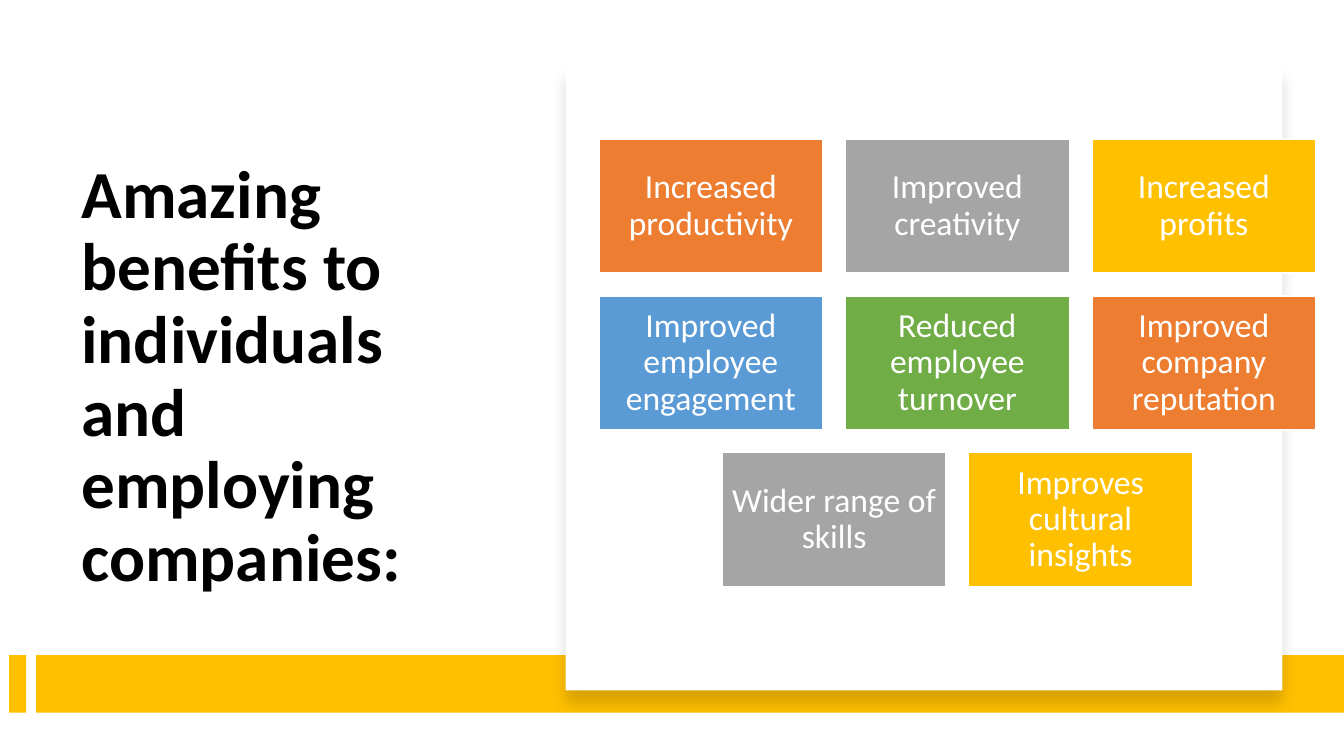
import pptx
import pptx.util
import pptx.dml.color
import pptx.enum.shapes
import pptx.enum.text
import pptx.oxml

COLORS = {
    "black": "000000",
    "white": "FFFFFF",
    "gold": "FFC000",
    "orange": "ED7D31",
    "gray": "A5A5A5",
    "blue": "5B9BD5",
    "green": "70AD47",
}
FONT = "Calibri"
COLUMNS = 3
GRID_LEFT, GRID_TOP = 5.94, 1.38
CARD_W, CARD_H = 2.22, 1.33
COLUMN_STEP, ROW_STEP = 2.445, 1.555
BENEFITS = [
    [("Increased productivity", "orange"), ("Improved creativity", "gray"),
     ("Increased profits", "gold")],
    [("Improved employee engagement", "blue"), ("Reduced employee turnover", "green"),
     ("Improved company reputation", "orange")],
    [("Wider range of skills", "gray"), ("Improves cultural insights", "gold")],
]
SHADOW = (
    '<a:effectLst xmlns:a="http://schemas.openxmlformats.org/drawingml/2006/main">'
    '<a:outerShdw blurRad="{blur}" dist="{dist}" dir="5400000" algn="t" rotWithShape="0">'
    '<a:srgbClr val="{color}"><a:alpha val="15000"/></a:srgbClr>'
    '</a:outerShdw></a:effectLst>'
)


def rgb(name):
    return pptx.dml.color.RGBColor.from_string(COLORS[name])


def inches(*values):
    return [pptx.util.Inches(v) for v in values]


def write_text(sp, text, size, color, bold=False, align="LEFT", inset=(0.1, 0.05)):
    tf = sp.text_frame
    tf.word_wrap = True
    tf.vertical_anchor = pptx.enum.text.MSO_ANCHOR.MIDDLE
    tf.margin_left = tf.margin_right = pptx.util.Inches(inset[0])
    tf.margin_top = tf.margin_bottom = pptx.util.Inches(inset[1])
    p = tf.paragraphs[0]
    p.alignment = getattr(pptx.enum.text.PP_ALIGN, align)
    p.line_spacing = 0.9
    r = p.add_run()
    r.text = text
    r.font.name = FONT
    r.font.size = pptx.util.Pt(size)
    r.font.bold = bold
    r.font.color.rgb = rgb(color)


def add_rect(s, box, fill, line=None):
    sp = s.shapes.add_shape(pptx.enum.shapes.MSO_SHAPE.RECTANGLE, *inches(*box))
    sp.shadow.inherit = False
    sp.fill.solid()
    sp.fill.fore_color.rgb = rgb(fill)
    if line:
        sp.line.color.rgb = rgb(line)
        sp.line.width = pptx.util.Pt(1)
    else:
        sp.line.fill.background()
    return sp


def add_panel(s, box):
    sp = add_rect(s, box, "white")
    sp.shadow.inherit = True
    sp._element.spPr.append(pptx.oxml.parse_xml(SHADOW.format(
        blur=pptx.util.Pt(11), dist=pptx.util.Pt(10), color=COLORS["black"])))


def add_cards(s):
    for row, cards in enumerate(BENEFITS):
        indent = (COLUMNS - len(cards)) / 2
        for column, (text, fill) in enumerate(cards):
            left = GRID_LEFT + (column + indent) * COLUMN_STEP
            top = GRID_TOP + row * ROW_STEP
            sp = add_rect(s, (left, top, CARD_W, CARD_H), fill, line="white")
            write_text(sp, text, 24, "white", align="CENTER", inset=(0.09, 0.09))


def main():
    prs = pptx.Presentation()
    prs.slide_width, prs.slide_height = inches(13.33, 7.5)
    s = prs.slides.add_slide(prs.slide_layouts[6])
    title = s.shapes.add_textbox(*inches(0.71, 1.2, 4.15, 5.1))
    write_text(title, "Amazing benefits to individuals and employing companies:",
               48, "black", bold=True)
    for left, width in ((0.09, 0.17), (0.36, 12.97)):
        add_rect(s, (left, 6.5, width, 0.57), "gold")
    add_panel(s, (5.61, 0.64, 7.11, 6.21))
    add_cards(s)
    prs.save("out.pptx")


if __name__ == "__main__":
    main()
